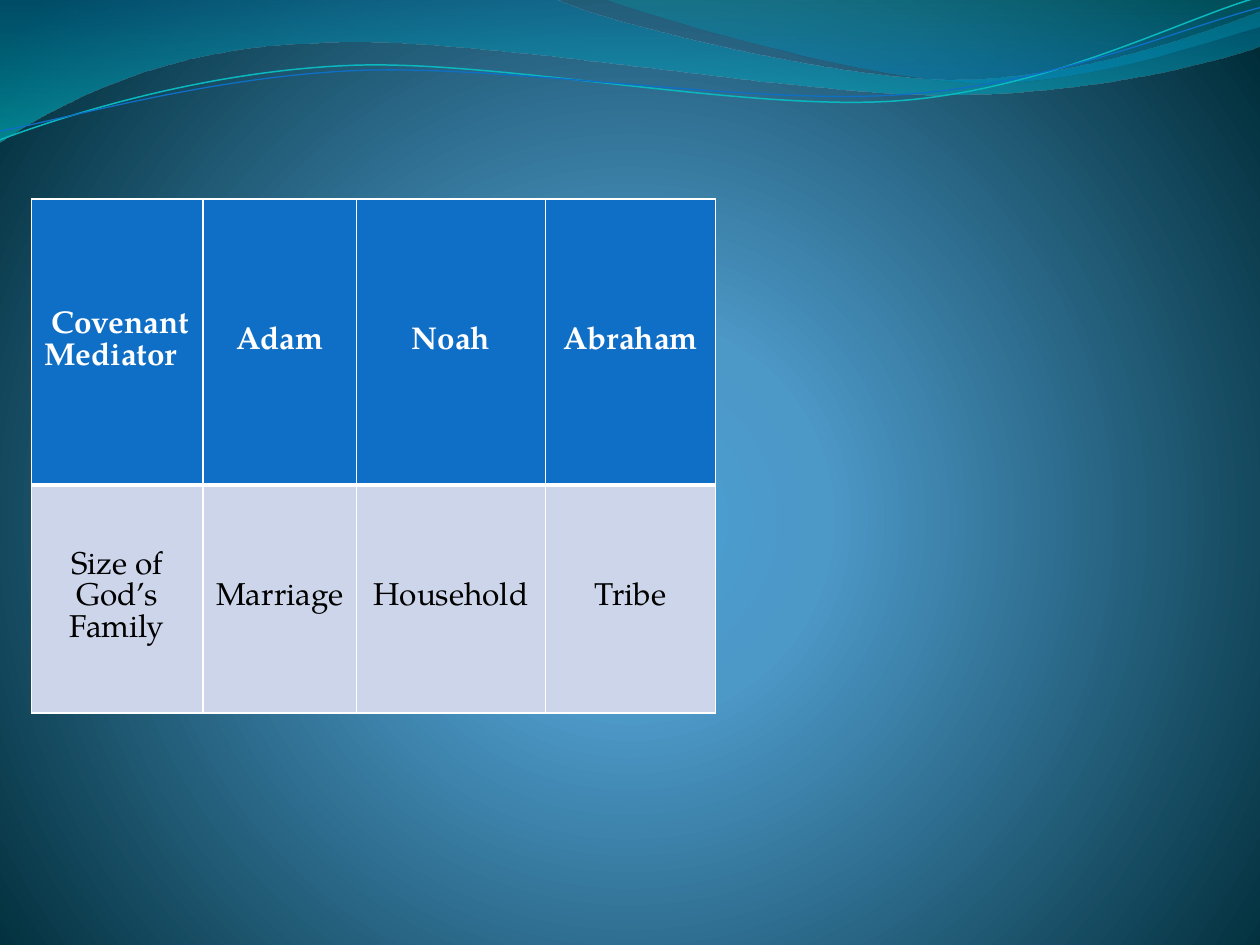
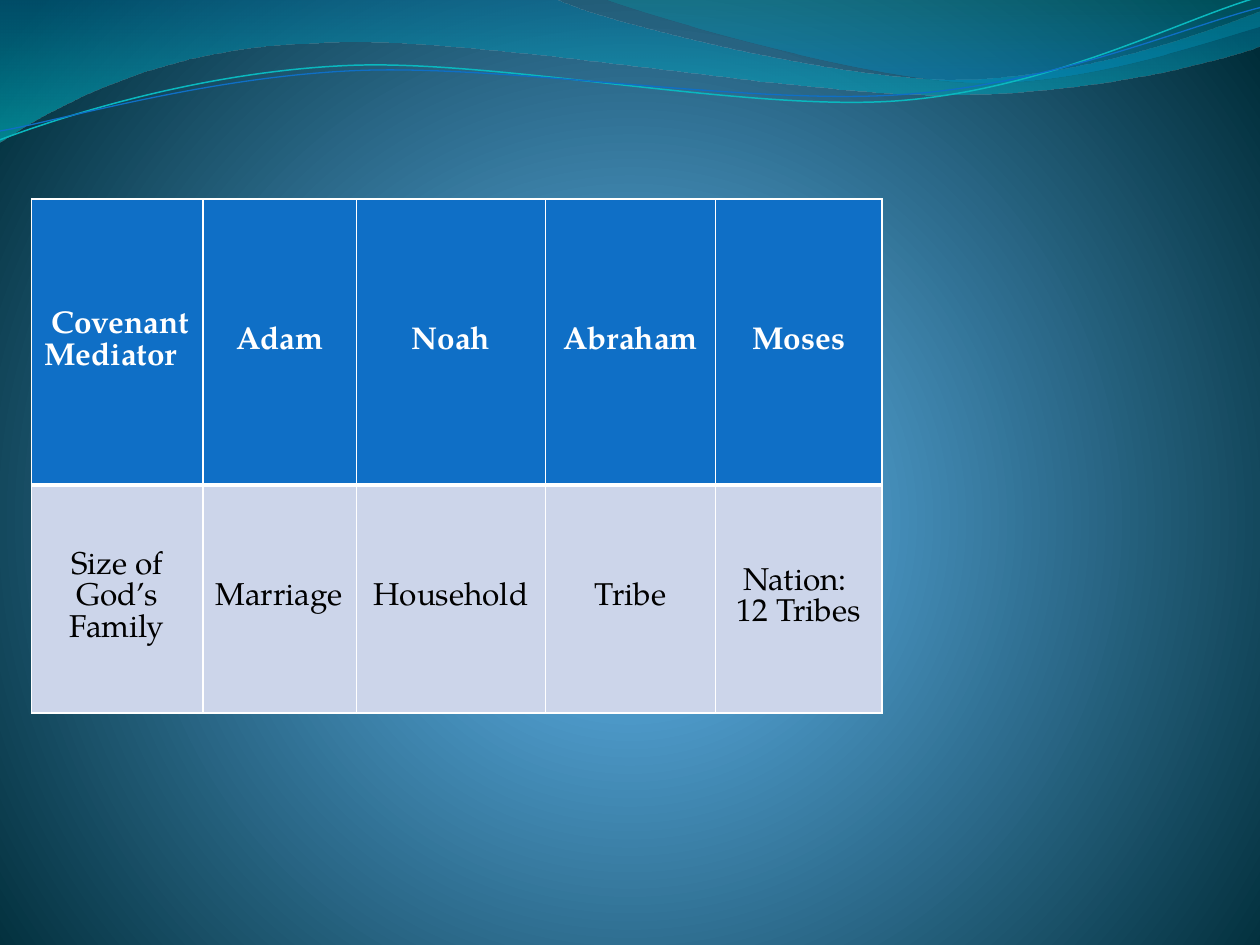
"""Build two slides on covenant mediators, on a shared wave backdrop."""
from dataclasses import dataclass, replace
from math import cos, radians, sin

from pptx import Presentation
from pptx.dml.color import RGBColor
from pptx.enum.text import MSO_ANCHOR, PP_ALIGN
from pptx.oxml import parse_xml
from pptx.oxml.ns import nsdecls
from pptx.util import Inches, Pt

LEFT, MID = PP_ALIGN.LEFT, PP_ALIGN.CENTER
MIDDLE = MSO_ANCHOR.MIDDLE
FONT = "TeX Gyre Pagella"
BLANK = 6
TILT = -2.7
HUES = {
    "core": "4AA0D6", "glow": "4C98C7", "edge": "002C38",
    "sea": "0074A1", "aqua": "00C6CF", "teal": "00A1A9", "lake": "008BBF",
    "mint": "0AB8BF", "blue": "0F6FC6", "pale": "CCD5EA",
    "white": "FFFFFF", "black": "000000",
}
DOWN = '<a:lin ang="5400000" scaled="1"/>'
ROUND = ('<a:path path="circle"><a:fillToRect l="10000" t="110000" '
         'r="10000" b="100000"/></a:path>')


@dataclass(frozen=True)
class Stop:
    """A gradient stop: place and opacity in percent."""
    at: int
    hue: str
    alpha: int = 100


@dataclass(frozen=True)
class Wave:
    """A box and an outline of points (2 numbers) and cubic curves (6 numbers)."""
    box: tuple[float, float, float, float]
    start: tuple[float, float]
    legs: tuple[tuple[float, ...], ...]
    stops: tuple[Stop, ...] = ()
    hue: str = ""
    width: float = 0
    turn: float = 0


@dataclass(frozen=True)
class Column:
    """A table column with its heading and the family size below it."""
    head: str
    size: str
    width: float
    align: PP_ALIGN = MID
    under: PP_ALIGN = MID


SKY = (Stop(0, "core"), Stop(25, "glow"), Stop(100, "edge"))
WAVES = (
    Wave((-0.01, -0.01, 10.02, 1.14), (0, 0),
         ((4.4, -0.01), (4.76, 0.17, 6.64, 0.63, 7.58, 0.63),
          (8.53, 0.63, 9.58, 0.26, 10, 0.09), (10.01, 0.36),
          (9.83, 0.44, 8.7, 0.76, 7.46, 0.75),
          (6.22, 0.75, 3.82, 0.28, 2.57, 0.34),
          (1.29, 0.36, 0.46, 0.83, -0.01, 1.13), (0, 0)),
         stops=(Stop(0, "sea", 45), Stop(100, "aqua", 55))),
    Wave((4.79, -0.01, 5.21, 0.7), (4.79, -0.01),
         ((5.09, 0.11, 6.82, 0.62, 7.69, 0.65),
          (8.56, 0.69, 9.61, 0.32, 10, 0.21), (10, 0), (4.79, -0.01)),
         stops=(Stop(0, "teal", 30), Stop(80, "lake", 45))),
    Wave((-0.02, 0.22, 10.02, 0.71), (0, 1.11),
         ((0.48, 0.93, 1.58, 0.57, 2.77, 0.52),
          (3.95, 0.47, 5.93, 0.89, 7.13, 0.8),
          (8.33, 0.71, 9.38, 0.15, 9.98, -0.02)),
         hue="mint", width=0.85, turn=TILT),
    Wave((-0.02, 0.3, 10.03, 0.58), (0, 1.04),
         ((0.47, 0.96, 1.64, 0.61, 2.83, 0.56),
          (4.03, 0.51, 5.97, 0.84, 7.17, 0.75),
          (8.36, 0.67, 9.41, 0.21, 10, 0.06)),
         hue="blue", width=0.75, turn=TILT),
)
ROWS = (2.27, 1.81)
FIRST = (
    Column(" Covenant Mediator", "Size of God’s Family", 1.36, align=LEFT),
    Column("Adam", "Marriage", 1.22),
    Column("Noah", "Household", 1.5),
    Column("Abraham", "Tribe", 1.35),
)
SECOND = (FIRST[0], replace(FIRST[1], under=LEFT), *FIRST[2:],
          Column("Moses", "Nation:  12 Tribes", 1.32))


def color(name: str) -> RGBColor:
    """Look up a colour by name."""
    return RGBColor.from_string(HUES[name])


def mark(stop: Stop) -> str:
    """Write one gradient stop as XML."""
    alpha = f'<a:alpha val="{stop.alpha * 1000}"/>' if stop.alpha < 100 else ""
    return (f'<a:gs pos="{stop.at * 1000}"><a:srgbClr val="{HUES[stop.hue]}">'
            f'{alpha}</a:srgbClr></a:gs>')


def blend(owner, fill, stops: tuple[Stop, ...], shade: str) -> None:
    """Give the owner's fill a gradient with these stops."""
    fill.gradient()
    old = owner.element.xpath(".//a:gradFill")[0]
    new = parse_xml(f'<a:gradFill {nsdecls("a")} rotWithShape="1"><a:gsLst>'
                    f'{"".join(map(mark, stops))}</a:gsLst>{shade}</a:gradFill>')
    old.getparent().replace(old, new)


def spot(wave: Wave, x: float, y: float) -> str:
    """Write a slide point as XML, inside the box before it is turned."""
    left, top, wide, tall = wave.box
    dx, dy = x - left - wide / 2, y - top - tall / 2
    turn = radians(-wave.turn)
    across = wide / 2 + dx * cos(turn) - dy * sin(turn)
    down = tall / 2 + dx * sin(turn) + dy * cos(turn)
    return f'<a:pt x="{Inches(across)}" y="{Inches(down)}"/>'


def curve(wave: Wave) -> str:
    """Write the outline of a wave as XML."""
    steps = [f"<a:moveTo>{spot(wave, *wave.start)}</a:moveTo>"]
    for leg in wave.legs:
        tag = "lnTo" if len(leg) == 2 else "cubicBezTo"
        dots = "".join(spot(wave, *dot) for dot in zip(leg[::2], leg[1::2]))
        steps.append(f"<a:{tag}>{dots}</a:{tag}>")
    if wave.stops:
        steps.append("<a:close/>")
    wide, tall = map(Inches, wave.box[2:])
    return f'<a:path {nsdecls("a")} w="{wide}" h="{tall}">{"".join(steps)}</a:path>'


def draw_wave(slide, wave: Wave):
    """Draw one wave as a filled band or as a thin line."""
    pen = slide.shapes.build_freeform(*map(Inches, wave.start))
    pen.add_line_segments([tuple(map(Inches, leg[-2:])) for leg in wave.legs],
                          close=bool(wave.stops))
    shape = pen.convert_to_shape()
    shape.left, shape.top, shape.width, shape.height = map(Inches, wave.box)
    shape.rotation = wave.turn
    old = shape.element.xpath(".//a:path")[0]
    old.getparent().replace(old, parse_xml(curve(wave)))
    shape.shadow.inherit = False
    if wave.stops:
        blend(shape, shape.fill, wave.stops, DOWN)
        shape.line.fill.background()
    else:
        shape.fill.background()
        shape.line.color.rgb = color(wave.hue)
        shape.line.width = Pt(wave.width)
    return shape


def set_back(deck, slide) -> None:
    """Put the glow and the waves on the slide master."""
    master = deck.slide_master
    blend(master, master.background.fill, SKY, ROUND)
    for key, wave in enumerate(WAVES, 101):
        node = draw_wave(slide, wave).element
        node.nvSpPr.cNvPr.set("id", str(key))
        master.shapes.element.append(node)


def put_text(frame, text: str, *, hue: str, bold: bool = False,
             align: PP_ALIGN = MID, size: int = 18) -> None:
    """Write one formatted paragraph."""
    para = frame.paragraphs[0]
    para.alignment = align
    para.line_spacing = Pt(size)
    run = para.add_run()
    run.text = text
    run.font.name = FONT
    run.font.size = Pt(size)
    run.font.bold = bold
    run.font.color.rgb = color(hue)


def style_cell(cell, fill: str, top: int, base: int) -> None:
    """Set the borders, fill and anchor of a cell."""
    props = cell._tc.get_or_add_tcPr()
    for side, width in zip("LRTB", (1, 1, top, base)):
        props.append(parse_xml(
            f'<a:ln{side} {nsdecls("a")} w="{Pt(width)}"><a:solidFill>'
            f'<a:srgbClr val="{HUES["white"]}"/></a:solidFill></a:ln{side}>'))
    cell.fill.solid()
    cell.fill.fore_color.rgb = color(fill)
    cell.vertical_anchor = MIDDLE


def add_grid(slide, cols: tuple[Column, ...]) -> None:
    """Add the covenant table."""
    span = sum(c.width for c in cols)
    grid = slide.shapes.add_table(len(ROWS), len(cols), Inches(0.25), Inches(1.58),
                                  Inches(span), Inches(sum(ROWS))).table
    grid.horz_banding = False
    for row, tall in zip(grid.rows, ROWS):
        row.height = Inches(tall)
    for i, col in enumerate(cols):
        grid.columns[i].width = Inches(col.width)
        head, body = grid.cell(0, i), grid.cell(1, i)
        style_cell(head, "blue", 1, 3)
        style_cell(body, "pale", 3, 1)
        put_text(head.text_frame, col.head, hue="white", bold=True, align=col.align)
        put_text(body.text_frame, col.size, hue="black", align=col.under)


def main() -> None:
    """Build and save the deck."""
    deck = Presentation()
    deck.slide_width, deck.slide_height = Inches(10), Inches(7.5)
    slides = [deck.slides.add_slide(deck.slide_layouts[BLANK]) for _ in range(2)]
    set_back(deck, slides[0])
    for slide, cols in zip(slides, (FIRST, SECOND)):
        add_grid(slide, cols)
    deck.save("out.pptx")


if __name__ == "__main__":
    main()
